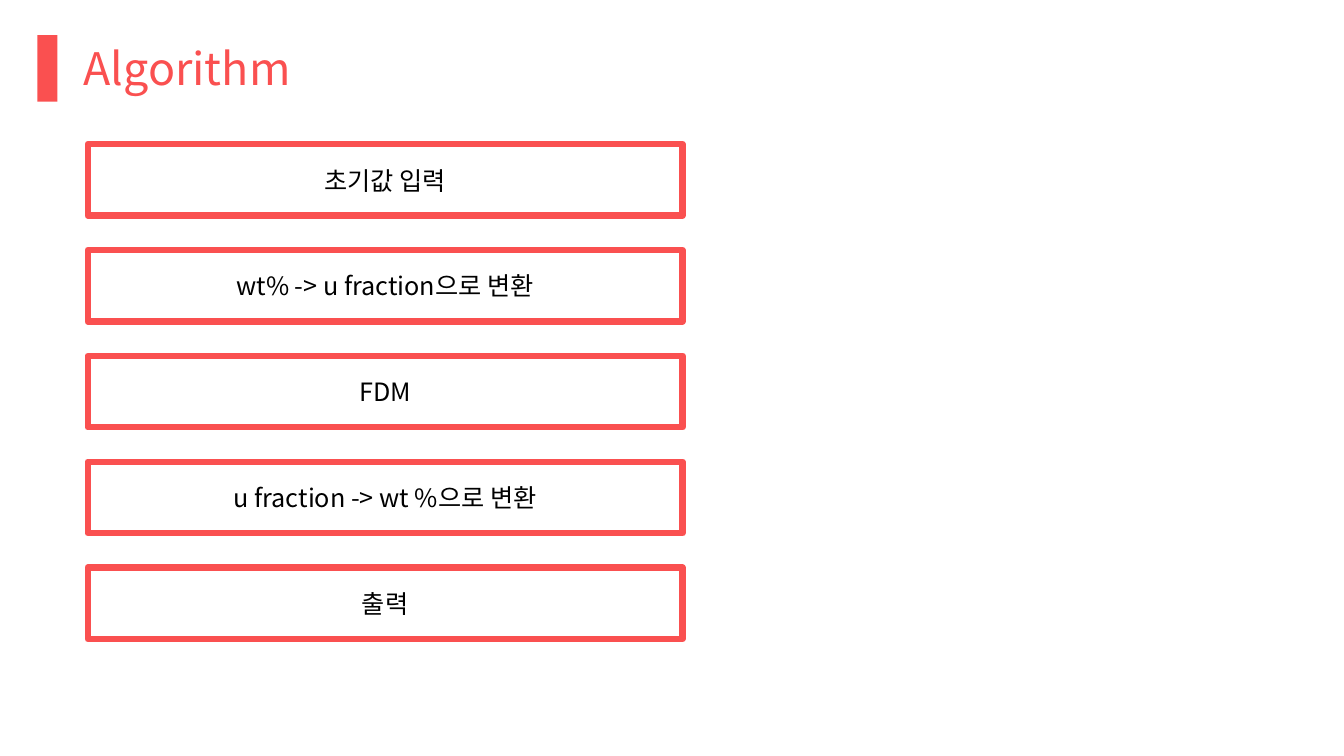
from pptx import Presentation
from pptx.dml.color import RGBColor
from pptx.enum.shapes import MSO_SHAPE
from pptx.enum.text import MSO_ANCHOR, MSO_AUTO_SIZE, PP_ALIGN
from pptx.oxml.ns import qn
from pptx.util import Inches, Pt

CORAL = RGBColor(0xFA, 0x50, 0x50)
BLACK = RGBColor(0x00, 0x00, 0x00)
FONT = "Noto Sans CJK KR"

STEPS = [
    "초기값 입력",
    "wt% -> u fraction으로 변환",
    "FDM",
    "u fraction -> wt %으로 변환",
    "출력",
]
STEP_TOP = 1.43
STEP_PITCH = 1.05


def write_text(frame, text, size, color):
    """Fill the first paragraph, using FONT for Latin and Korean letters alike."""
    paragraph = frame.paragraphs[0]
    paragraph.text = text
    font = paragraph.font
    font.name = FONT
    font.size = Pt(size)
    font.color.rgb = color
    properties = paragraph._p.get_or_add_pPr().find(qn("a:defRPr"))
    east_asian = properties.makeelement(qn("a:ea"), {"typeface": FONT})
    properties.find(qn("a:latin")).addnext(east_asian)
    return paragraph


def add_rectangle(slide, left, top, width, height):
    shape = slide.shapes.add_shape(
        MSO_SHAPE.RECTANGLE, Inches(left), Inches(top), Inches(width), Inches(height)
    )
    shape.shadow.inherit = False
    return shape


def add_title(slide, text):
    marker = add_rectangle(slide, 0.37, 0.35, 0.2, 0.66)
    marker.fill.solid()
    marker.fill.fore_color.rgb = CORAL
    marker.line.fill.background()

    title = slide.shapes.add_textbox(Inches(0.73), Inches(0.36), Inches(2.44), Inches(0.64))
    title.text_frame.word_wrap = False
    title.text_frame.auto_size = MSO_AUTO_SIZE.SHAPE_TO_FIT_TEXT
    write_text(title.text_frame, text, 32, CORAL)


def add_step(slide, top, text):
    box = add_rectangle(slide, 0.87, top, 5.9, 0.71)
    box.fill.background()
    box.line.color.rgb = CORAL
    box.line.width = Pt(4.5)
    box.text_frame.vertical_anchor = MSO_ANCHOR.MIDDLE
    paragraph = write_text(box.text_frame, text, 18, BLACK)
    paragraph.alignment = PP_ALIGN.CENTER


def main():
    presentation = Presentation()
    presentation.slide_width = Inches(13.33)
    presentation.slide_height = Inches(7.5)
    slide = presentation.slides.add_slide(presentation.slide_layouts[6])

    add_title(slide, "Algorithm")
    for index, text in enumerate(STEPS):
        add_step(slide, STEP_TOP + index * STEP_PITCH, text)

    presentation.save("out.pptx")


if __name__ == "__main__":
    main()
